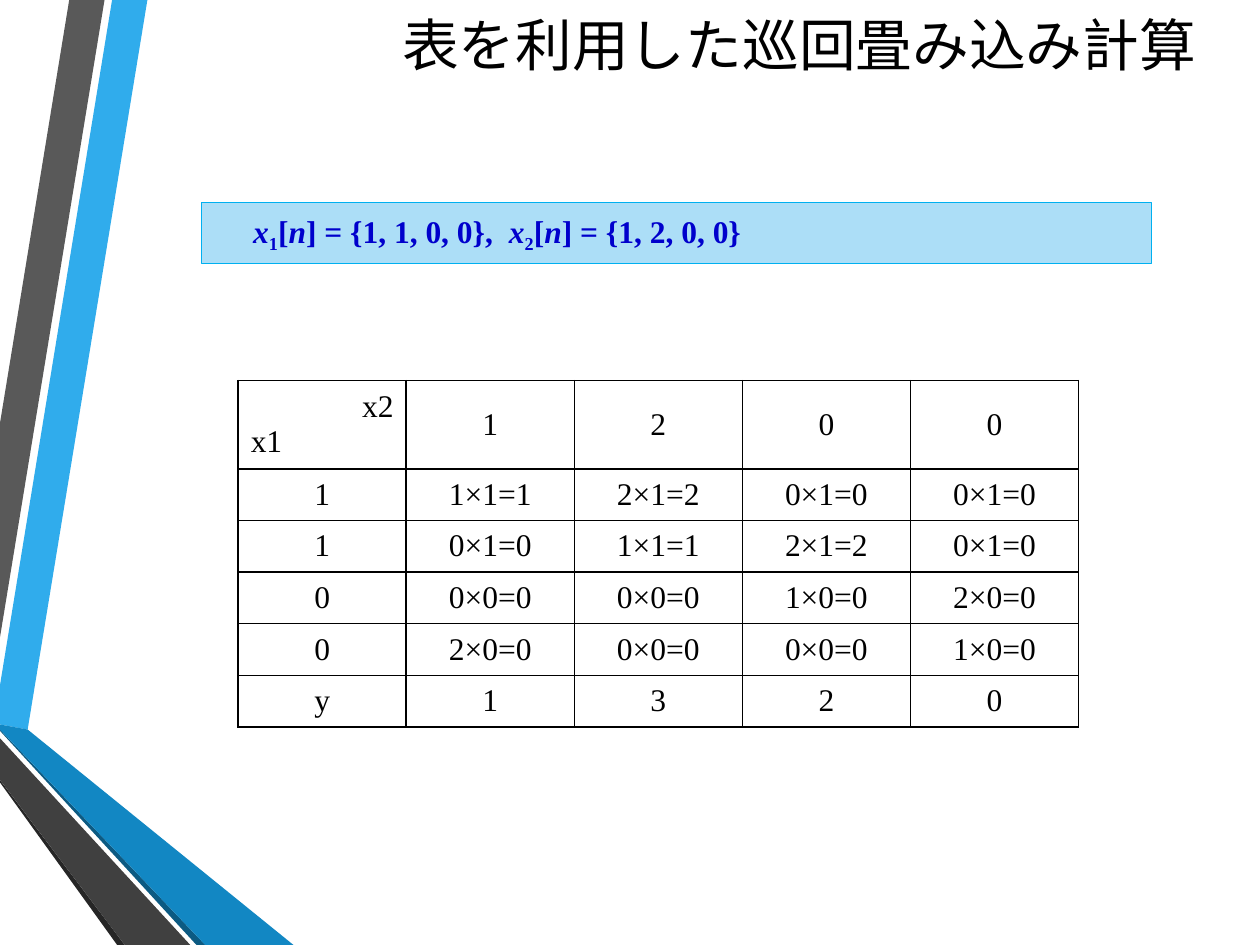
from dataclasses import dataclass
from typing import Any

import pptx
import pptx.dml.color
import pptx.enum.shapes
import pptx.enum.text
import pptx.oxml.ns
import pptx.util
from lxml import etree

Inches = pptx.util.Inches
Pt = pptx.util.Pt
Align = pptx.enum.text.PP_ALIGN
Anchor = pptx.enum.text.MSO_ANCHOR
qn = pptx.oxml.ns.qn


@dataclass(frozen=True)
class Theme:
    black: str = "000000"
    formula_text: str = "0000CC"
    formula_fill: str = "ACDEF7"
    formula_line: str = "00B0F0"
    title_font: str = "Calibri"
    body_font: str = "Times New Roman"
    title_size: float = 32.4
    body_size: float = 18


@dataclass(frozen=True)
class Ribbon:
    color: str
    points: tuple[tuple[float, float], ...]


@dataclass(frozen=True)
class Piece:
    text: str
    italic: bool = False
    subscript: bool = False


THEME = Theme()
RIBBONS = (
    Ribbon("30ACEC", ((0, 5.44), (0, 5.75), (0.22, 5.79), (1.17, 0), (0.89, 0))),
    Ribbon("595959", ((0.83, 0), (0.55, 0), (0, 3.36), (0, 5.06))),
    Ribbon("262626", ((0, 6.19), (0, 6.21), (0.93, 7.5), (0.99, 7.5))),
    Ribbon("0C5A82", ((0, 5.79), (0, 5.8), (1.56, 7.5), (1.63, 7.5))),
    Ribbon("1287C3", ((0, 5.79), (1.63, 7.5), (2.33, 7.5), (0.22, 5.79), (0, 5.75))),
    Ribbon("404040", ((0, 6.19), (0.99, 7.5), (1.51, 7.5), (0, 5.86))),
)
X1 = (1, 1, 0, 0)
X2 = (1, 2, 0, 0)


def rgb(color: str) -> pptx.dml.color.RGBColor:
    return pptx.dml.color.RGBColor.from_string(color)


def add_span(para: Any, text: str, *, font: str = THEME.body_font,
             size: float = THEME.body_size, color: str = THEME.black,
             bold: bool = False, italic: bool = False, subscript: bool = False) -> None:
    span = para.add_run()
    span.text = text
    span.font.name = font
    span.font.size = Pt(size)
    span.font.color.rgb = rgb(color)
    span.font.bold = bold
    span.font.italic = italic
    if subscript:
        span._r.get_or_add_rPr().set("baseline", "-25000")


def draw_ribbon(page: Any, ribbon: Ribbon) -> None:
    start, *others = [(Inches(x), Inches(y)) for x, y in ribbon.points]
    builder = page.shapes.build_freeform(*start)
    builder.add_line_segments(others, close=True)
    shape = builder.convert_to_shape()
    shape.shadow.inherit = False
    shape.fill.solid()
    shape.fill.fore_color.rgb = rgb(ribbon.color)
    shape.line.fill.background()


def draw_title(page: Any, text: str) -> None:
    box = page.shapes.add_textbox(Inches(1.16), 0, Inches(8.43), Inches(0.69))
    box.text_frame.word_wrap = True
    box.text_frame.vertical_anchor = Anchor.MIDDLE
    para = box.text_frame.paragraphs[0]
    para.alignment = Align.RIGHT
    add_span(para, text, font=THEME.title_font, size=THEME.title_size)


def sequence_pieces(index: int, values: tuple[int, ...], ending: str = "") -> list[Piece]:
    """Format one sequence, such as x1[n] = {1, 1, 0, 0}."""
    listing = ", ".join(map(str, values))
    return [Piece("x", italic=True), Piece(str(index), subscript=True), Piece("["),
            Piece("n", italic=True), Piece(f"] = {{{listing}}}{ending}")]


def draw_formula(page: Any) -> None:
    box = page.shapes.add_shape(pptx.enum.shapes.MSO_SHAPE.RECTANGLE,
                                Inches(1.6), Inches(1.61), Inches(7.54), Inches(0.48))
    box.shadow.inherit = False
    box.fill.solid()
    box.fill.fore_color.rgb = rgb(THEME.formula_fill)
    box.line.color.rgb = rgb(THEME.formula_line)
    box.line.width = Pt(0.75)
    frame = box.text_frame
    frame.word_wrap = True
    frame.vertical_anchor = Anchor.TOP
    frame.margin_left = Inches(0.41)
    para = frame.paragraphs[0]
    para.alignment = Align.LEFT
    para.line_spacing = Pt(26)
    para.space_after = Pt(6)
    for piece in sequence_pieces(1, X1, ",  ") + sequence_pieces(2, X2):
        add_span(para, piece.text, color=THEME.formula_text, bold=True,
                 italic=piece.italic, subscript=piece.subscript)


def style_cell(cell: Any) -> None:
    """Give a cell thin black borders and no fill."""
    properties = cell._tc.get_or_add_tcPr()
    for side in ("a:lnL", "a:lnR", "a:lnT", "a:lnB"):
        border = etree.SubElement(properties, qn(side), w=str(Pt(1)))
        fill = etree.SubElement(border, qn("a:solidFill"))
        etree.SubElement(fill, qn("a:srgbClr"), val=THEME.black)
    cell.fill.background()
    cell.vertical_anchor = Anchor.MIDDLE


def convolution_rows() -> list[list[str]]:
    """Shift x2 cyclically down the rows, and add up each column in the last."""
    count = len(X1)
    shifted = [[X2[(column - row) % count] for column in range(count)]
               for row in range(count)]
    products = [[str(factor), *(f"{value}×{factor}={value * factor}" for value in values)]
                for factor, values in zip(X1, shifted)]
    totals = [sum(value * factor for value, factor in zip(column, X1))
              for column in zip(*shifted)]
    return [["", *map(str, X2)], *products, ["y", *map(str, totals)]]


def draw_table(page: Any) -> None:
    rows = convolution_rows()
    table = page.shapes.add_table(len(rows), len(rows[0]), Inches(1.89), Inches(3.02),
                                  Inches(6.67), Inches(2.73)).table
    table.first_row = False
    table.horz_banding = False
    for index, row in enumerate(table.rows):
        row.height = Inches(0.41 if index else 0.68)
    for row, texts in zip(table.rows, rows):
        for cell, text in zip(row.cells, texts):
            style_cell(cell)
            if text:
                para = cell.text_frame.paragraphs[0]
                para.alignment = Align.CENTER
                add_span(para, text)
    corner = table.cell(0, 0).text_frame
    for para, text, alignment in (
        (corner.paragraphs[0], "x2", Align.RIGHT),
        (corner.add_paragraph(), "x1", Align.LEFT),
    ):
        para.alignment = alignment
        add_span(para, text)


def main() -> None:
    deck = pptx.Presentation()
    deck.slide_width = Inches(10)
    deck.slide_height = Inches(7.5)
    page = deck.slides.add_slide(deck.slide_layouts[6])
    for ribbon in RIBBONS:
        draw_ribbon(page, ribbon)
    draw_title(page, "表を利用した巡回畳み込み計算")
    draw_formula(page)
    draw_table(page)
    deck.save("out.pptx")


if __name__ == "__main__":
    main()
